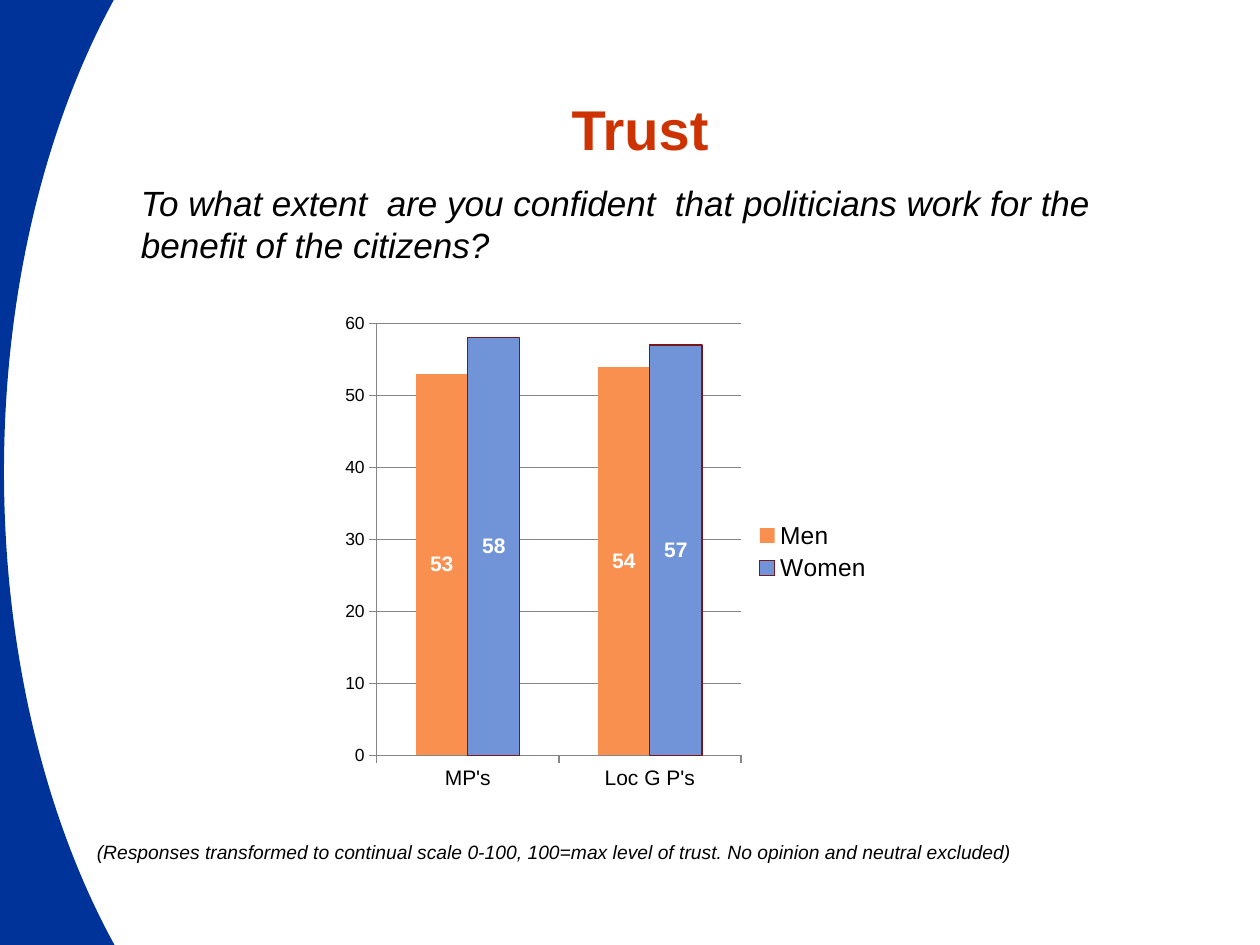
from lxml import etree
from pptx import Presentation
from pptx import util as u
from pptx.chart.data import CategoryChartData
from pptx.dml.color import RGBColor
from pptx.enum import chart as ch, shapes, text
from pptx.oxml.ns import qn

COLORS = {"crescent": "003399", "title": "CC3300", "text": "000000",
          "label": "FFFFFF", "grid": "868686", "men": "FA9050",
          "women": "7194D9", "women_edge": "79161C"}


def rgb(name):
    """Return the palette colour with the given name."""
    return RGBColor.from_string(COLORS[name])


def place(item, left, top, width, height):
    """Move and size an item, in inches."""
    item.left, item.top = u.Inches(left), u.Inches(top)
    item.width, item.height = u.Inches(width), u.Inches(height)


def style_font(font, size, color="text", bold=False, italic=False):
    """Set the Arial font with its size, colour and style."""
    font.name, font.size = "Arial", u.Pt(size)
    font.bold, font.italic = bold, italic
    font.color.rgb = rgb(color)


def add_title(slide, wording):
    """Fill and format the title placeholder."""
    title = slide.shapes.title
    place(title, 0.83, 0.58, 8.5, 0.83)
    title.text_frame.vertical_anchor = text.MSO_ANCHOR.MIDDLE
    heading = title.text_frame.paragraphs[0]
    heading.alignment = text.PP_ALIGN.CENTER
    heading.line_spacing = u.Pt(42)
    run = heading.add_run()
    run.text = wording
    style_font(run.font, 32, "title", bold=True)


def add_crescent(slide):
    """Draw the blue crescent behind the left edge."""
    crescent = slide.shapes.add_shape(
        shapes.MSO_SHAPE.MOON, u.Inches(-1.33), u.Inches(-0.67),
        u.Inches(2.67), u.Inches(8.83))
    crescent.adjustments[0] = 0.51
    crescent.shadow.inherit = False
    crescent.fill.solid()
    crescent.fill.fore_color.rgb = rgb("crescent")
    crescent.line.fill.background()
    slide.shapes.title.element.addprevious(crescent.element)


def add_italic_text(slide, wording, box, size, wrap):
    """Add a text box with one italic paragraph."""
    frame = slide.shapes.add_textbox(*map(u.Inches, box)).text_frame
    frame.word_wrap = wrap
    frame.auto_size = text.MSO_AUTO_SIZE.SHAPE_TO_FIT_TEXT
    run = frame.paragraphs[0].add_run()
    run.text = wording
    style_font(run.font, size, italic=True)


def set_plot_layout(chart, **fractions):
    """Fix the inner plot area as fractions of the chart."""
    plot_area = chart.element.find(".//" + qn("c:plotArea"))
    for old in plot_area.findall(qn("c:layout")):
        plot_area.remove(old)
    layout = etree.Element(qn("c:layout"))
    manual = etree.SubElement(layout, qn("c:manualLayout"))
    settings = {"layoutTarget": "inner", "xMode": "edge", "yMode": "edge", **fractions}
    for tag, value in settings.items():
        etree.SubElement(manual, qn(f"c:{tag}")).set("val", str(value))
    plot_area.insert(0, layout)


def style_axis(axis, size):
    """Format the line, ticks and labels of an axis."""
    axis.major_tick_mark = ch.XL_TICK_MARK.OUTSIDE
    axis.minor_tick_mark = ch.XL_TICK_MARK.NONE
    axis.format.line.color.rgb = rgb("grid")
    axis.format.line.width = u.Pt(0.75)
    style_font(axis.tick_labels.font, size)


def style_series(series, fill, edge=None):
    """Colour a series and show its values inside the columns."""
    series.format.fill.solid()
    series.format.fill.fore_color.rgb = rgb(fill)
    if edge:
        series.format.line.color.rgb = rgb(edge)
        series.format.line.width = u.Pt(0.75)
    else:
        series.format.line.fill.background()
    labels = series.data_labels
    labels.show_value = True
    labels.position = ch.XL_LABEL_POSITION.CENTER
    labels.number_format, labels.number_format_is_linked = "#,##0", False
    style_font(labels.font, 12, "label", bold=True)


def add_trust_chart(slide):
    """Add the column chart of trust by gender."""
    trust = CategoryChartData()
    trust.categories = ["MP's", "Loc G P's"]
    trust.add_series("Men", (53, 54))
    trust.add_series("Women", (58, 57))
    chart = slide.shapes.add_chart(
        ch.XL_CHART_TYPE.COLUMN_CLUSTERED, u.Inches(2.64), u.Inches(2.41),
        u.Inches(4.38), u.Inches(3.94), trust).chart
    chart.has_title = False
    style_font(chart.font, 10)
    set_plot_layout(chart, x=0.08, y=0.04, w=0.66, h=0.87)

    plot = chart.plots[0]
    plot.gap_width, plot.overlap, plot.vary_by_categories = 150, 0, False
    men, women = plot.series
    style_series(men, "men")
    style_series(women, "women", "women_edge")

    style_axis(chart.category_axis, 12)
    scale = chart.value_axis
    style_axis(scale, 10)
    scale.minimum_scale, scale.maximum_scale, scale.major_unit = 0, 60, 10
    scale.tick_labels.number_format = "0"
    scale.tick_labels.number_format_is_linked = False
    scale.has_major_gridlines = True
    scale.major_gridlines.format.line.color.rgb = rgb("grid")
    scale.major_gridlines.format.line.width = u.Pt(0.75)

    chart.has_legend = True
    chart.legend.position = ch.XL_LEGEND_POSITION.RIGHT
    chart.legend.include_in_layout = False
    style_font(chart.legend.font, 14)


def main():
    """Build the slide and save it."""
    deck = Presentation()
    deck.slide_width, deck.slide_height = u.Inches(10), u.Inches(7.5)
    slide = deck.slides.add_slide(deck.slide_layouts[5])
    add_title(slide, "Trust")
    add_crescent(slide)
    add_trust_chart(slide)
    add_italic_text(
        slide, "To what extent  are you confident  that politicians work "
        "for the benefit of the citizens?", (1.02, 1.39, 8.27, 0.77), 20, True)
    add_italic_text(
        slide, "(Responses transformed to continual scale 0-100, 100=max level "
        "of trust. No opinion and neutral excluded)", (0.67, 6.62, 7.5, 0.47), 11, False)
    deck.save("out.pptx")


if __name__ == "__main__":
    main()
